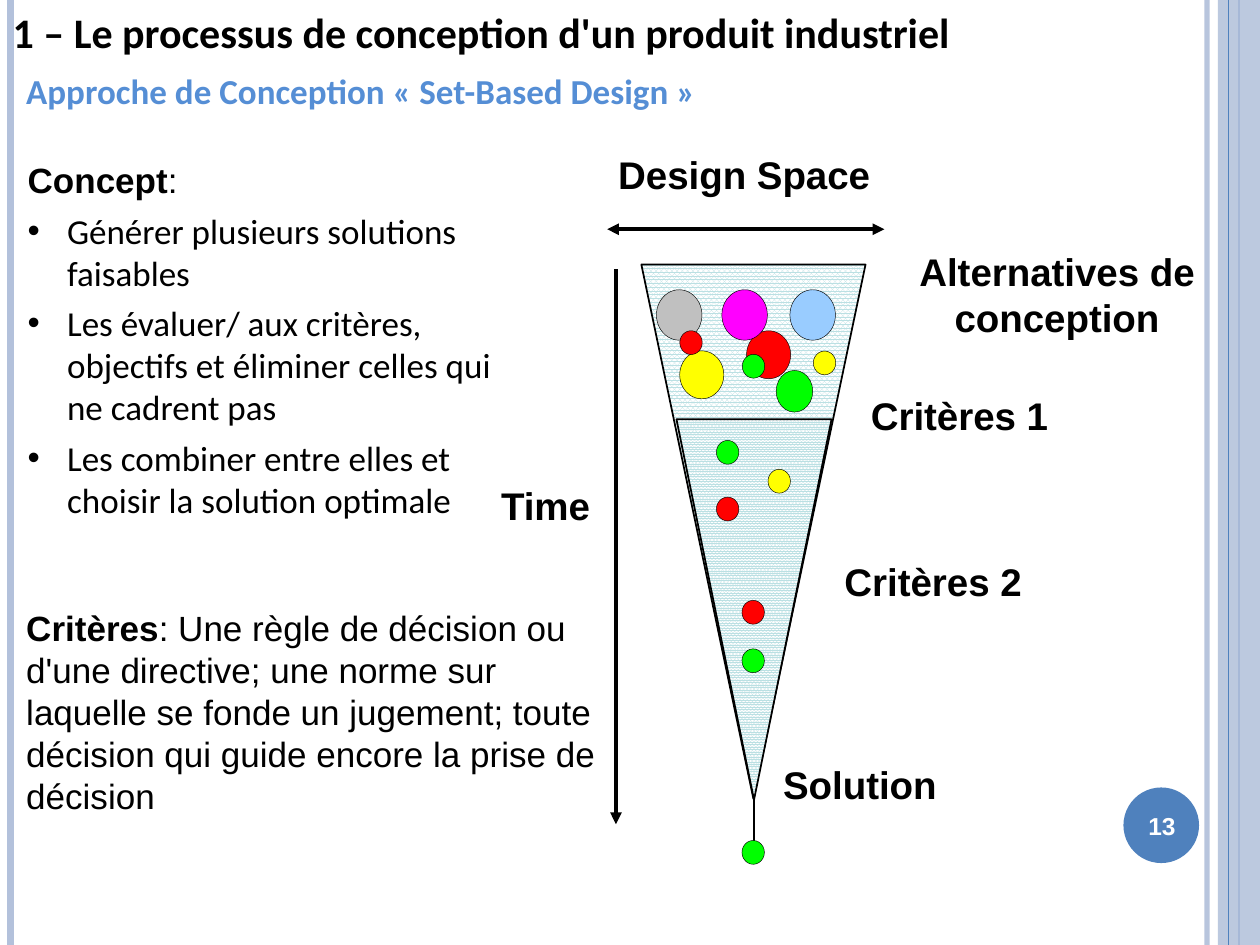
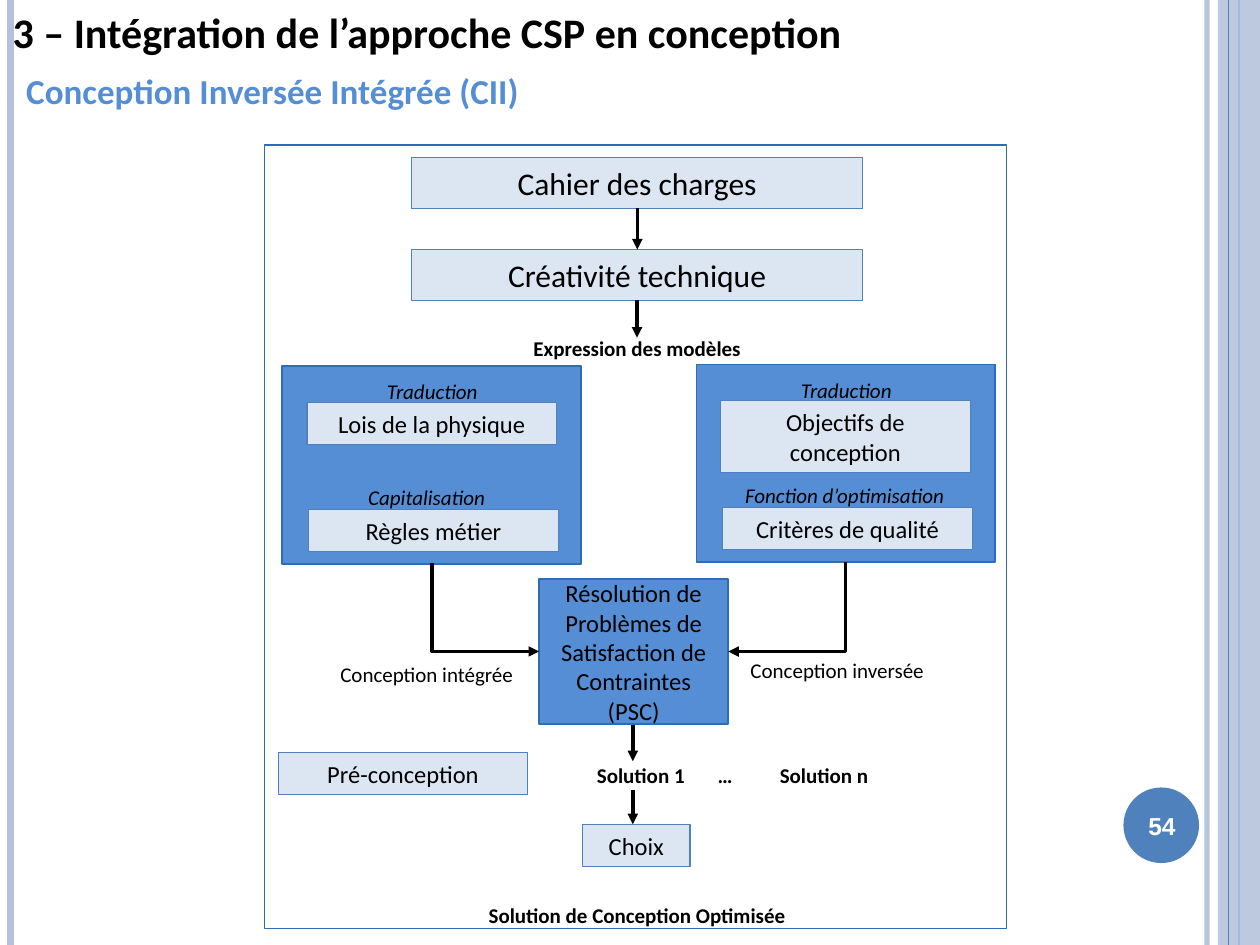
from dataclasses import dataclass

from lxml import etree
from pptx import Presentation
from pptx.dml.color import RGBColor
from pptx.enum.dml import MSO_PATTERN
from pptx.enum.shapes import MSO_CONNECTOR, MSO_SHAPE
from pptx.enum.text import MSO_ANCHOR, MSO_AUTO_SIZE, PP_ALIGN
from pptx.oxml.ns import qn
from pptx.util import Pt

LEFT, CENTER = PP_ALIGN.LEFT, PP_ALIGN.CENTER
TOP, MIDDLE = MSO_ANCHOR.TOP, MSO_ANCHOR.MIDDLE
NO_FIT = MSO_AUTO_SIZE.NONE
RECTANGLE, ELLIPSE = MSO_SHAPE.RECTANGLE, MSO_SHAPE.OVAL
STRAIGHT = MSO_CONNECTOR.STRAIGHT
COARSE, FINE = MSO_PATTERN.PERCENT_80, MSO_PATTERN.PERCENT_90
TITLE_AND_BODY, TITLE_ONLY = 1, 5
WIDTH, HEIGHT = 720, 540


@dataclass(frozen=True)
class Theme:
    """Colours, fonts and type sizes of the deck."""

    black: str = "000000"
    white: str = "FFFFFF"
    band: str = "B3C1DB"
    accent: str = "4F81BD"
    blue: str = "558ED5"
    edge: str = "2C6CB9"
    pale: str = "DCE6F2"
    funnel: str = "BBE0E3"
    red: str = "FF0000"
    green: str = "00FF00"
    yellow: str = "FFFF00"
    magenta: str = "FF00FF"
    grey: str = "C0C0C0"
    sky: str = "99CCFF"
    sans: str = "Calibri"
    plain: str = "Arial"
    title: int = 24
    label: int = 22
    body: int = 20
    step: int = 18
    card: int = 14
    note: int = 12


def apply(target, values):
    """Set every named value on the target."""
    for name, value in values.items():
        setattr(target, name, value)


def colour(code):
    """Turn a hex code into a colour."""
    return RGBColor.from_string(code)


class Painter:
    """Holds the theme and the current page and draws each kind of element."""

    def __init__(self, deck, theme):
        """Start with a deck and a theme."""
        self.deck, self.theme, self.page = deck, theme, None

    def new_page(self, layout, title, subtitle, number):
        """Add a page with its title, subtitle and number."""
        theme = self.theme
        self.page = self.deck.slides.add_slide(self.deck.slide_layouts[layout])
        heading = self.page.shapes.title
        self.place(heading, 0, 0, 620, 36)
        self.fill_text(heading.text_frame, title, theme.title, bold=True)
        self.text(subtitle, 7.9, 36, 420, 32, theme.body, ink=theme.blue, bold=True)
        self.text(number, 640, 451.5, 48, 41, theme.card, ink=theme.white,
                  font=theme.plain, bold=True, align=CENTER, anchor=MIDDLE)

    def place(self, shape, left, top, width, height):
        """Move and size a shape."""
        apply(shape, {"left": Pt(left), "top": Pt(top),
                      "width": Pt(width), "height": Pt(height)})

    def fill_text(self, frame, paragraphs, size, ink=None, font=None, bold=False,
                  italic=False, align=LEFT, anchor=TOP, margins=(7.2, 3.6), wrap=True):
        """Fill a text frame with paragraphs of text or of (text, bold) spans."""
        side, edge = map(Pt, margins)
        apply(frame, {"auto_size": NO_FIT, "word_wrap": wrap, "vertical_anchor": anchor,
                      "margin_left": side, "margin_right": side,
                      "margin_top": edge, "margin_bottom": edge})
        if isinstance(paragraphs, str):
            paragraphs = [paragraphs]
        for index, spans in enumerate(paragraphs):
            para = frame.add_paragraph() if index else frame.paragraphs[0]
            apply(para, {"alignment": align, "space_before": Pt(0)})
            for words, weight in [(spans, bold)] if isinstance(spans, str) else spans:
                span = para.add_run()
                span.text = words
                apply(span.font, {"size": Pt(size), "name": font or self.theme.sans,
                                  "bold": weight, "italic": italic})
                span.font.color.rgb = colour(ink or self.theme.black)

    def text(self, words, left, top, width, height, size, **style):
        """Add a text box."""
        box = self.page.shapes.add_textbox(Pt(left), Pt(top), Pt(width), Pt(height))
        self.fill_text(box.text_frame, words, size, **style)
        return box

    def label(self, words, left, top, width, height=34.6, wrap=False):
        """Add a bold diagram label."""
        self.text(words, left, top, width, height, self.theme.label, bold=True,
                  font=self.theme.plain, align=CENTER, margins=(7.9, 4.3), wrap=wrap)

    def caption(self, words, left, top, width, **style):
        """Add a small caption."""
        return self.text(words, left, top, width, 21.6, self.theme.note, **style)

    def outline(self, shape, ink, weight):
        """Set the line of a shape."""
        shape.line.color.rgb = colour(ink)
        shape.line.width = Pt(weight)

    def shape(self, kind, left, top, width, height, fill, edge=None, weight=1):
        """Add a filled preset shape."""
        shape = self.page.shapes.add_shape(kind, Pt(left), Pt(top), Pt(width), Pt(height))
        shape.shadow.inherit = False
        shape.fill.solid()
        shape.fill.fore_color.rgb = colour(fill)
        if edge:
            self.outline(shape, edge, weight)
        else:
            shape.line.fill.background()
        return shape

    def panel(self, left, top, width, height, fill):
        """Add a rectangle with the dark edge."""
        return self.shape(RECTANGLE, left, top, width, height, fill, self.theme.edge)

    def card(self, words, left, top, width=142.6, height=24.2, size=None):
        """Add a pale box with centred text."""
        box = self.shape(RECTANGLE, left, top, width, height,
                         self.theme.pale, self.theme.accent, 0.75)
        self.fill_text(box.text_frame, words, size or self.theme.card,
                       align=CENTER, anchor=MIDDLE)

    def bubble(self, x, y, width, height, fill):
        """Add an ellipse around a centre."""
        self.shape(ELLIPSE, x - width / 2, y - height / 2, width, height,
                   fill, self.theme.black, 0.25)

    def cone(self, left, top, right, tip, pattern):
        """Add a patterned triangle pointing down."""
        builder = self.page.shapes.build_freeform(Pt(left), Pt(top))
        builder.add_line_segments([(Pt((left + right) / 2), Pt(tip)), (Pt(right), Pt(top))])
        cone = builder.convert_to_shape()
        cone.shadow.inherit = False
        cone.fill.patterned()
        cone.fill.pattern = pattern
        cone.fill.fore_color.rgb = colour(self.theme.funnel)
        cone.fill.back_color.rgb = colour(self.theme.white)
        self.outline(cone, self.theme.black, 1)

    def line(self, x1, y1, x2, y2, ink=None, weight=2, ends=()):
        """Add a line with arrowheads at the named ends."""
        line = self.page.shapes.add_connector(STRAIGHT, Pt(x1), Pt(y1), Pt(x2), Pt(y2))
        self.outline(line, ink or self.theme.black, weight)
        properties = line.element.spPr
        for end in ends:
            etree.SubElement(properties.find(qn("a:ln")), qn(f"a:{end}"), type="triangle")
        etree.SubElement(properties, qn("a:effectLst"))
        return line

    def elbow(self, x1, y1, x2, y2):
        """Add an arrow that goes down and then sideways."""
        drop, reach = y2 - y1, abs(x2 - x1)
        middle_x, middle_y = (x1 + x2) / 2, (y1 + y2) / 2
        side = 1 if x2 > x1 else -1
        bend = self.line(middle_x + side * drop / 2, middle_y - reach / 2,
                         middle_x - side * drop / 2, middle_y + reach / 2,
                         ends=["tailEnd"])
        properties = bend.element.spPr
        properties.find(qn("a:prstGeom")).set("prst", "bentConnector2")
        properties.find(qn("a:xfrm")).set("rot", str((180 + side * 90) * 60000))

    def fade(self, shape, percent):
        """Make the colour of a shape partly transparent."""
        tint = next(shape.element.spPr.iter(qn("a:srgbClr")))
        etree.SubElement(tint, qn("a:alpha"), val=str(percent * 1000))

    def decorate_master(self):
        """Put the bands and the number disc on the slide master."""
        theme = self.theme
        bands = [self.line(x, 0, x, HEIGHT, ink, weight) for x, ink, weight in (
            (689.8, theme.band, 3), (6, theme.band, 4.5), (708, theme.accent, 1.5))]
        stripe = self.shape(RECTANGLE, 696, 0, 24, HEIGHT, theme.band)
        thin = self.line(702, 0, 702, HEIGHT, theme.accent, 0.75)
        disc = self.shape(ELLIPSE, 642, 450, 43.2, 43.2, theme.accent)
        self.fade(bands[0], 93)
        self.fade(stripe, 87)
        tree = self.deck.slide_master.element.cSld.spTree
        for part in [*bands, stripe, thin, disc]:
            tree.append(part.element)


def draw_set_based_design(painter):
    """Draw the funnel of design alternatives."""
    theme = painter.theme
    painter.new_page(TITLE_AND_BODY, "1 – Le processus de conception d'un produit industriel",
                     "Approche de Conception « Set-Based Design »", "13")
    painter.decorate_master()
    painter.cone(366.5, 151.2, 494.6, 456.5, COARSE)
    painter.cone(386.6, 239.6, 475.2, 457, FINE)
    painter.line(430.9, 456.5, 430.9, 483, weight=0.75)
    painter.line(352, 154, 352, 471, weight=2.25, ends=["tailEnd"])
    painter.line(347, 131, 505.4, 131, weight=2.25, ends=["headEnd", "tailEnd"])
    for bubble in (
            (464.4, 180, 26, 28.8, theme.sky), (439.2, 202.7, 25.2, 27.4, theme.red),
            (425.5, 180, 26, 28.8, theme.magenta), (401, 214.2, 25.2, 27.4, theme.yellow),
            (388.1, 180, 26, 28.8, theme.grey), (454, 223.6, 20.9, 23.8, theme.green)):
        painter.bubble(*bubble)
    for x, y, fill in (
            (394.9, 195.8, theme.red), (471.2, 207.4, theme.yellow),
            (430.6, 209.3, theme.green), (430.4, 349.9, theme.red),
            (430.4, 377.6, theme.green), (430.4, 487.1, theme.green),
            (415.8, 290.9, theme.red), (415.8, 258.5, theme.green),
            (445.3, 275, theme.yellow)):
        painter.bubble(x, y, 12.8, 13.6, fill)
    painter.label("Design Space", 345, 82, 160.6)
    painter.label("Alternatives de conception", 494.6, 137.5, 219, 61.2, wrap=True)
    painter.label("Critères 1", 488.9, 219.6, 118.8)
    painter.label("Critères 2", 473.8, 314.6, 118.8)
    painter.label("Time", 277.9, 271.4, 67.7)
    painter.label("Solution", 439.2, 430.6, 104.4)

    body = painter.page.placeholders[1]
    painter.place(body, 7.9, 86.4, 296.6, 211.7)
    painter.fill_text(body.text_frame, [
        [("Concept", True), (":", False)],
        "Générer plusieurs solutions faisables",
        "Les évaluer/ aux critères, objectifs et éliminer celles qui ne cadrent pas",
        "Les combiner entre elles et choisir la solution optimale",
    ], theme.body, margins=(7.9, 4.3))
    concept, *points = body.text_frame.paragraphs
    for span in concept.runs:
        span.font.name = theme.plain
    for para in points:
        para.space_before = Pt(4.8)
    for para, indent in [(concept, 0), *((point, Pt(22.5)) for point in points)]:
        properties = para._p.get_or_add_pPr()
        properties.set("marL", str(indent))
        properties.set("indent", str(-indent))
    etree.SubElement(concept._p.get_or_add_pPr(), qn("a:buNone"))
    painter.text([[("Critères", True), (
        ": Une règle de décision ou d'une directive; une norme sur laquelle se fonde un "
        "jugement; toute décision qui guide encore la prise de décision", False)]],
        7.9, 343, 345, 128, theme.body, font=theme.plain)


def draw_integrated_design(painter):
    """Draw the flow of integrated reverse design."""
    theme = painter.theme
    painter.new_page(TITLE_ONLY, "3 – Intégration de l’approche CSP en conception",
                     "Conception Inversée Intégrée (CII)", "54")
    painter.panel(151.2, 82.8, 424, 447.8, theme.white)
    for words, top in (("Cahier des charges", 90), ("Créativité technique", 142.6)):
        painter.card(words, 235.2, top, 257.8, 29, theme.step)
    painter.panel(161.3, 209.3, 170.8, 113, theme.blue)
    painter.panel(398, 208.3, 170.8, 113, theme.blue)
    for card in (("Lois de la physique", 175.4, 229.9), ("Règles métier", 176.4, 291),
                 ("Objectifs de conception", 411.8, 229, 142.6, 41),
                 ("Critères de qualité", 413, 290), ("Pré-conception", 159, 430),
                 ("Choix", 332.8, 471, 61.6)):
        painter.card(*card)
    for words, left, top, width in (
            ("Traduction", 193, 213, 108), ("Capitalisation", 189.8, 273.6, 108),
            ("Traduction", 429.6, 212, 108), ("Fonction d’optimisation", 409.6, 272.4, 146)):
        painter.caption(words, left, top, width, italic=True, align=CENTER)
    for words, top in (("Expression des modèles", 188),
                       ("Solution de Conception Optimisée", 512)):
        painter.caption(words, 235.2, top, 257.8, bold=True, align=CENTER)
    solver = painter.panel(308, 331, 108.2, 82.8, theme.blue)
    painter.fill_text(solver.text_frame,
                      "Résolution de Problèmes de Satisfaction de Contraintes (PSC)",
                      theme.card, align=CENTER, anchor=MIDDLE)
    for x, start, end in ((364.2, 119, 142.6), (364, 171.4, 193),
                          (361.6, 414, 435), (361.6, 451.5, 471)):
        painter.line(x, start, x, end, ends=["tailEnd"])
    painter.elbow(246.8, 322, 308, 372.3)
    painter.elbow(483.2, 321.2, 416.2, 372.3)
    painter.caption("Conception intégrée", 187.4, 374.6, 122.4)
    painter.caption("Conception inversée", 421.8, 372.3, 122.4)
    solutions = painter.caption("Solution 1\t…\tSolution n", 334, 432, 190, bold=True)
    properties = solutions.text_frame.paragraphs[0]._p.get_or_add_pPr()
    stops = etree.SubElement(properties, qn("a:tabLst"))
    for stop in (69, 104.5):
        etree.SubElement(stops, qn("a:tab"), pos=str(Pt(stop)), algn="l")


def main():
    """Build and save the deck."""
    deck = Presentation()
    apply(deck, {"slide_width": Pt(WIDTH), "slide_height": Pt(HEIGHT)})
    painter = Painter(deck, Theme())
    draw_set_based_design(painter)
    draw_integrated_design(painter)
    deck.save("out.pptx")


if __name__ == "__main__":
    main()
